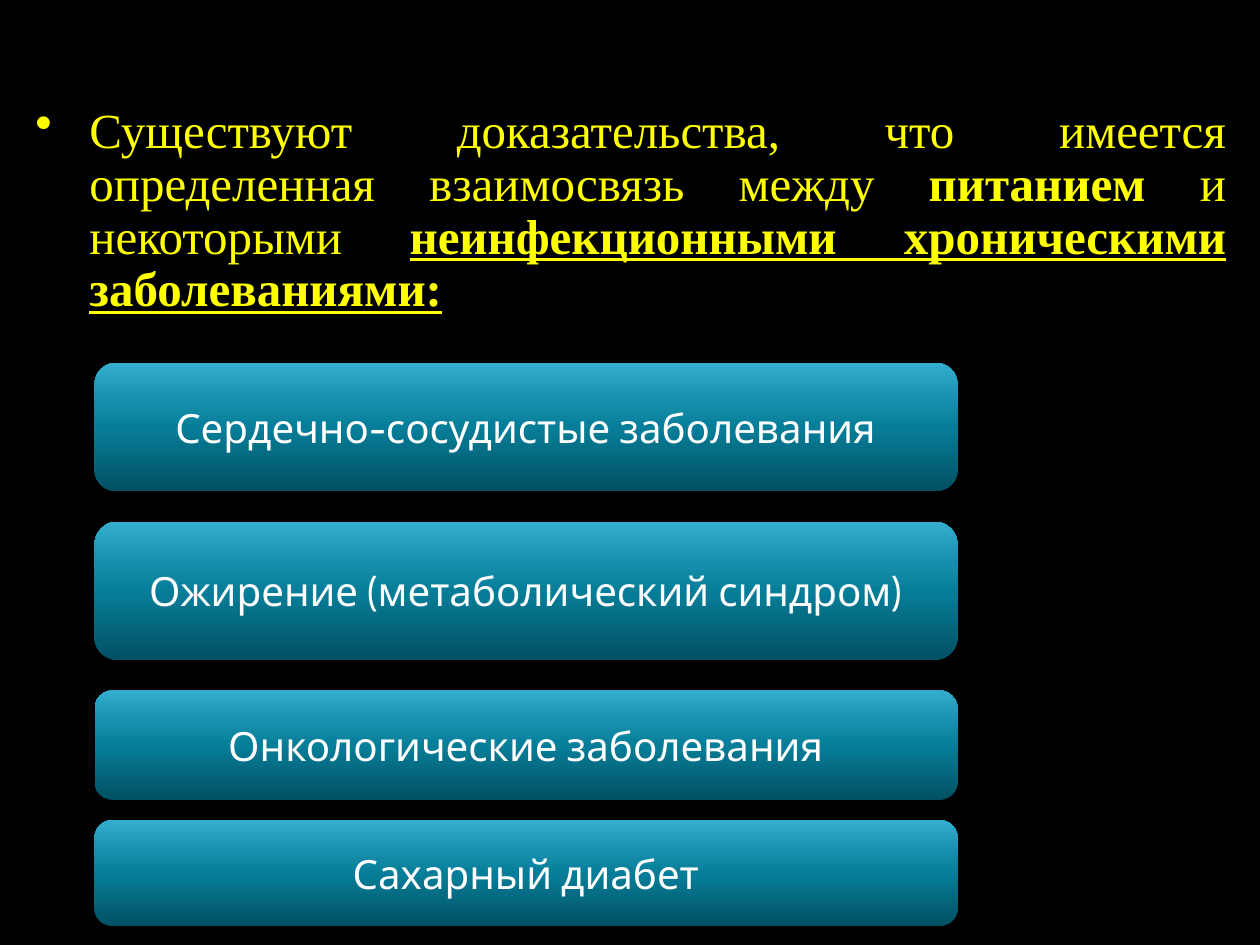
import lxml.etree
import pptx
import pptx.dml.color
import pptx.enum.shapes
import pptx.enum.text
import pptx.oxml
import pptx.oxml.ns
import pptx.util

Inches, Pt = pptx.util.Inches, pptx.util.Pt
qn = pptx.oxml.ns.qn
COLORS = {"background": "000000", "statement": "FFFF00", "label": "FFFFFF"}
GRADIENT = {0: "015062", 50: "077E99", 70: "178EAB", 100: "35ADCE"}


def color(name):
    return pptx.dml.color.RGBColor.from_string(COLORS[name])


presentation = pptx.Presentation()
presentation.slide_width, presentation.slide_height = Inches(10), Inches(7.5)
slide = presentation.slides.add_slide(presentation.slide_layouts[6])
slide.background.fill.solid()
slide.background.fill.fore_color.rgb = color("background")

# Bulleted statement
statement = slide.shapes.add_textbox(Inches(0.28), Inches(0.84), Inches(9.45), Inches(3.7))
frame = statement.text_frame
frame.word_wrap = True
frame.margin_left = frame.margin_right = frame.margin_top = frame.margin_bottom = 0
paragraph = frame.paragraphs[0]
paragraph.alignment = pptx.enum.text.PP_ALIGN.JUSTIFY
paragraph.line_spacing = 0.9
properties = paragraph._p.get_or_add_pPr()
properties.set("marL", str(Inches(0.43)))
properties.set("indent", str(-Inches(0.43)))
lxml.etree.SubElement(properties, qn("a:buChar")).set("char", "•")
paragraph.font.size = Pt(28)
paragraph.font.name = "Times New Roman"
paragraph.font.color.rgb = color("statement")
for text, bold, underline in (
    ("Существуют доказательства, что имеется определенная взаимосвязь между ", False, False),
    ("питанием", True, False),
    (" и некоторыми ", False, False),
    ("неинфекционными хроническими заболеваниями:", True, True),
):
    run = paragraph.add_run()
    run.text = text
    run.font.bold = bold
    run.font.underline = underline

# Disease bars: label, top, height
for label, top, height in (
    ("Сердечно-сосудистые заболевания", 2.88, 1.02),
    ("Ожирение (метаболический синдром)", 4.14, 1.1),
    ("Онкологические заболевания", 5.48, 0.87),
    ("Сахарный диабет", 6.51, 0.84),
):
    bar = slide.shapes.add_shape(
        pptx.enum.shapes.MSO_SHAPE.ROUNDED_RECTANGLE,
        Inches(0.75), Inches(top), Inches(6.85), Inches(height))
    bar.shadow.inherit = False
    bar.line.fill.background()

    # Four gradient stops, dark at the bottom
    bar.fill.gradient()
    bar.fill.gradient_angle = 90
    stops = bar._element.spPr.find(qn("a:gradFill")).find(qn("a:gsLst"))
    for stop in list(stops):
        stops.remove(stop)
    for position, value in GRADIENT.items():
        stop = lxml.etree.SubElement(stops, qn("a:gs"))
        stop.set("pos", str(position * 1000))
        lxml.etree.SubElement(stop, qn("a:srgbClr")).set("val", value)

    frame = bar.text_frame
    frame.word_wrap = True
    frame.vertical_anchor = pptx.enum.text.MSO_ANCHOR.MIDDLE
    paragraph = frame.paragraphs[0]
    paragraph.text = label
    paragraph.alignment = pptx.enum.text.PP_ALIGN.CENTER
    paragraph.font.size = Pt(23)
    paragraph.font.name = "Cabin"
    paragraph.font.color.rgb = color("label")

presentation.save("out.pptx")
